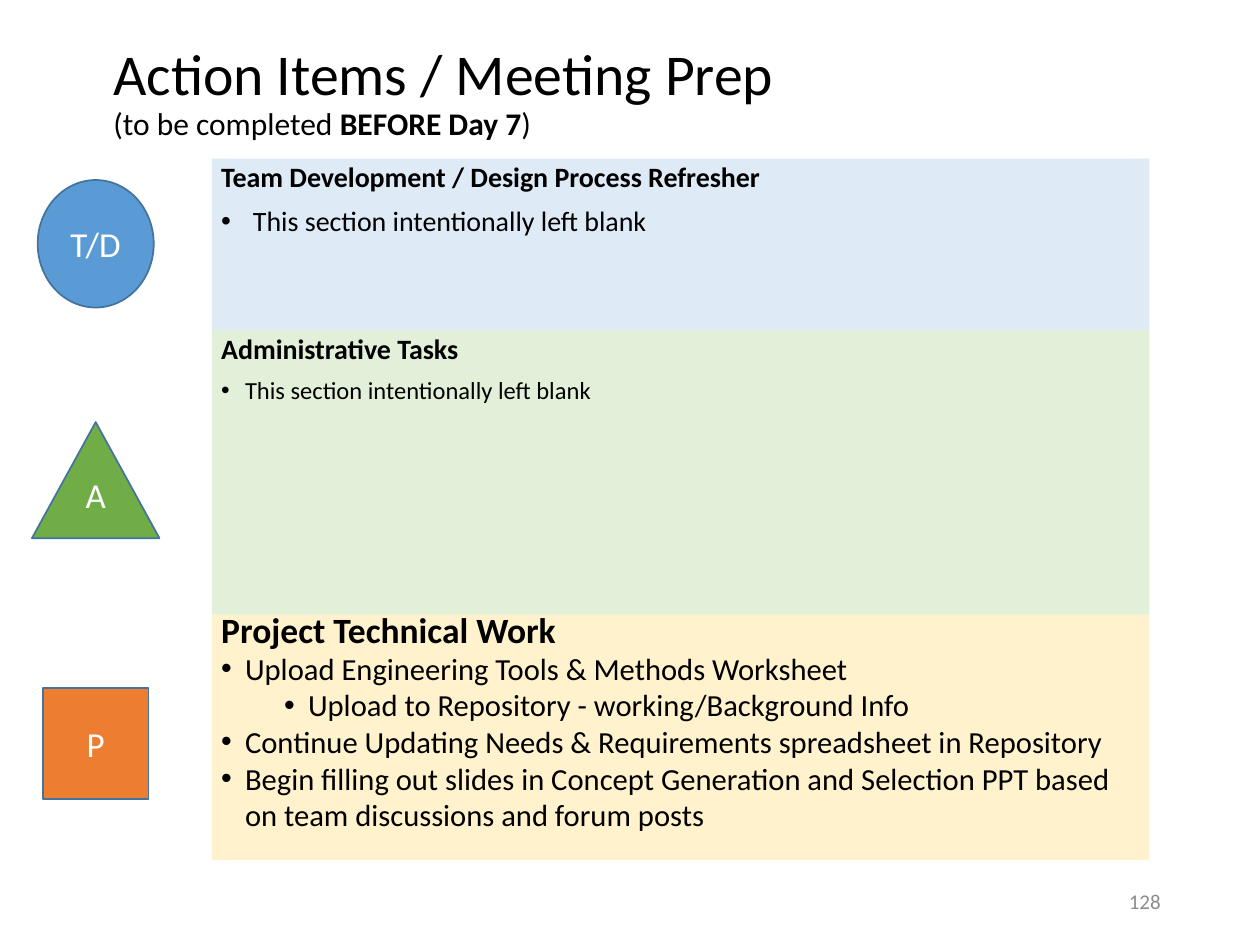
from dataclasses import dataclass

from lxml.etree import SubElement
from pptx import Presentation
from pptx.dml.color import RGBColor
from pptx.enum.shapes import MSO_SHAPE
from pptx.enum.text import MSO_ANCHOR, MSO_AUTO_SIZE, PP_ALIGN
from pptx.oxml.ns import qn
from pptx.util import Cm, Pt


@dataclass(frozen=True)
class Theme:
    font: str = "Calibri"
    text: str = "000000"
    light: str = "FFFFFF"
    muted: str = "8C8C8C"
    outline: str = "43739E"
    blue: str = "5B9BD5"
    green: str = "70AD47"
    orange: str = "ED7D31"
    pale_blue: str = "DEEBF7"
    pale_green: str = "E2F0D9"
    pale_yellow: str = "FFF2CC"
    title: float = 33
    subtitle: float = 18
    heading: float = 16
    small: float = 14
    project_heading: float = 20.3
    project: float = 17.5
    icon: float = 20
    number: float = 12


@dataclass
class Item:
    text: str
    size: float
    bold: bool = False
    left: float = 0      # left margin, cm
    hanging: float = 0   # bullet indent, cm; 0 means no bullet
    level: int = 0
    spacing: float = 1.0
    before: float = 0


class Deck:
    PANEL_LEFT, PANEL_WIDTH = 4.27, 18.9
    ICON_CENTER = 1.93

    def __init__(self, prs, theme):
        self.theme = theme
        self.slide = prs.slides.add_slide(prs.slide_layouts.get_by_name("Comparison"))

    def style(self, r, size, color, bold=False):
        r.font.name = self.theme.font
        r.font.size = Pt(size)
        r.font.bold = bold
        r.font.color.rgb = RGBColor.from_string(color)

    def place(self, sp, left, top, width, height):
        sp.left, sp.top, sp.width, sp.height = map(Cm, (left, top, width, height))

    def fill(self, sp, color):
        sp.fill.solid()
        sp.fill.fore_color.rgb = RGBColor.from_string(color)

    def frame(self, sp, anchor):
        tf = sp.text_frame
        tf.word_wrap = True
        tf.auto_size = MSO_AUTO_SIZE.NONE
        tf.vertical_anchor = anchor
        return tf

    def title(self, heading, parts):
        sp = self.slide.shapes.title
        self.place(sp, 2.03, 0.66, 21.89, 2.46)
        p = self.frame(sp, MSO_ANCHOR.MIDDLE).paragraphs[0]
        p.alignment = PP_ALIGN.LEFT
        p.line_spacing = 0.9
        p.text = heading
        self.style(p.runs[0], self.theme.title, self.theme.text)
        p.add_line_break()
        for text, bold in parts:
            r = p.add_run()
            r.text = text
            self.style(r, self.theme.subtitle, self.theme.text, bold)

    def panel(self, idx, top, height, color, items):
        sp = self.slide.placeholders[idx]
        self.place(sp, self.PANEL_LEFT, top, self.PANEL_WIDTH, height)
        self.fill(sp, color)
        tf = self.frame(sp, MSO_ANCHOR.TOP)
        tf.margin_left = tf.margin_right = Cm(0.19)
        tf.margin_top = tf.margin_bottom = Cm(0.1)
        tf.text = "\n".join(item.text for item in items)
        for p, item in zip(tf.paragraphs, items):
            p.level = item.level
            p.alignment = PP_ALIGN.LEFT
            p.line_spacing = item.spacing
            p.space_before, p.space_after = Pt(item.before), Pt(0)
            self.bullet(p, item)
            self.style(p.runs[0], item.size, self.theme.text, item.bold)

    def bullet(self, p, item):
        pPr = p._p.get_or_add_pPr()
        pPr.set("marL", str(Cm(item.left)))
        pPr.set("indent", str(Cm(-item.hanging)))
        if item.hanging:
            SubElement(pPr, qn("a:buFont"), typeface="Arial")
            SubElement(pPr, qn("a:buChar"), char="•")
        else:
            SubElement(pPr, qn("a:buNone"))

    def icon(self, kind, label, top, width, height, color, bottom=0.13):
        left = self.ICON_CENTER - width / 2
        sp = self.slide.shapes.add_shape(kind, *map(Cm, (left, top, width, height)))
        sp.shadow.inherit = False
        self.fill(sp, color)
        sp.line.color.rgb = RGBColor.from_string(self.theme.outline)
        sp.line.width = Pt(1)
        tf = self.frame(sp, MSO_ANCHOR.MIDDLE)
        tf.margin_bottom = Cm(bottom)
        tf.text = label
        p = tf.paragraphs[0]
        p.alignment = PP_ALIGN.CENTER
        self.style(p.runs[0], self.theme.icon, self.theme.light)

    def number(self, text):
        sp = self.slide.shapes.add_textbox(Cm(17.93), Cm(17.65), Cm(5.72), Cm(1.02))
        tf = self.frame(sp, MSO_ANCHOR.MIDDLE)
        tf.text = text
        p = tf.paragraphs[0]
        p.alignment = PP_ALIGN.RIGHT
        self.style(p.runs[0], self.theme.number, self.theme.muted)

    def drop_empty_placeholders(self):
        for sp in list(self.slide.placeholders):
            if not sp.text_frame.text:
                sp._element.getparent().remove(sp._element)


def main():
    prs = Presentation()
    prs.slide_width, prs.slide_height = Cm(25.4), Cm(19.05)
    theme = Theme()
    deck = Deck(prs, theme)

    # Title
    deck.title("Action Items / Meeting Prep",
               [("(to be completed ", False), ("BEFORE Day 7", True), (")", False)])

    # Panel contents
    blank = "This section intentionally left blank"
    loose = dict(spacing=0.9, before=7.5)
    step = dict(left=0.48, hanging=0.48)
    substep = dict(left=1.75, hanging=0.48, level=1)
    team = [
        Item("Team Development / Design Process Refresher", theme.heading, True, **loose),
        Item(blank, theme.heading, left=0.64, hanging=0.64, **loose),
    ]
    admin = [
        Item("Administrative Tasks", theme.heading, True, **loose),
        Item(blank, theme.small, **step, **loose),
    ]
    project = [
        Item("Project Technical Work", theme.project_heading, True, spacing=0.7, before=7.5),
        Item("Upload Engineering Tools & Methods Worksheet", theme.project, **step),
        Item("Upload to Repository - working/Background Info", theme.project, **substep),
        Item("Continue Updating Needs & Requirements spreadsheet in Repository",
             theme.project, **step),
        Item("Begin filling out slides in Concept Generation and Selection PPT based "
             "on team discussions and forum posts", theme.project, **step),
    ]

    # Panels, stacked without gaps
    top = 3.2
    panels = [(3.45, theme.pale_blue, team), (5.74, theme.pale_green, admin),
              (4.95, theme.pale_yellow, project)]
    for idx, (height, color, items) in enumerate(panels, start=1):
        deck.panel(idx, top, height, color, items)
        top += height

    # Icons, centred on one axis
    deck.icon(MSO_SHAPE.OVAL, "T/D", 3.63, 2.34, 2.57, theme.blue)
    deck.icon(MSO_SHAPE.ISOSCELES_TRIANGLE, "A", 8.51, 2.57, 2.34, theme.green, bottom=0.7)
    deck.icon(MSO_SHAPE.RECTANGLE, "P", 13.87, 2.13, 2.24, theme.orange)

    # Slide number
    deck.number("128")
    deck.drop_empty_placeholders()
    prs.save("out.pptx")


if __name__ == "__main__":
    main()
